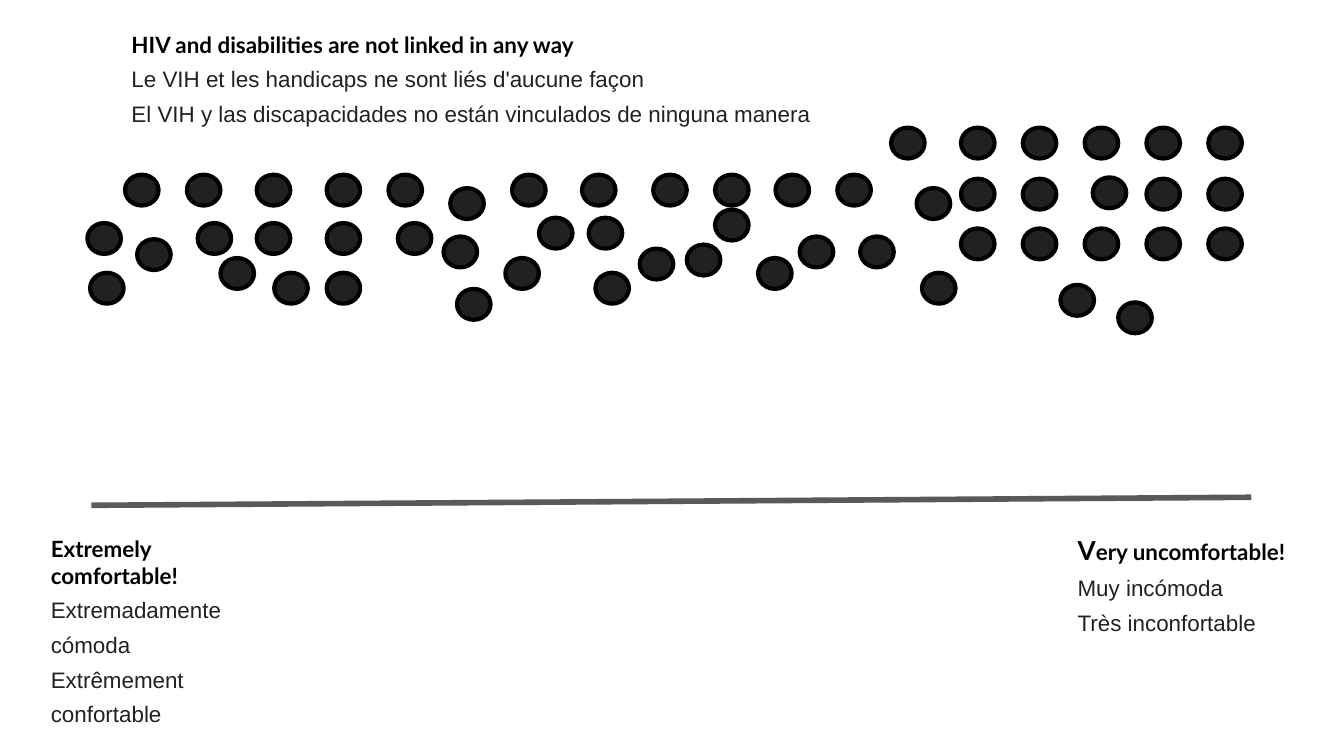
from lxml import etree
from pptx import Presentation
from pptx import util as u
from pptx.dml.color import RGBColor
from pptx.enum import shapes, text
from pptx.oxml.ns import qn

PX = 4572
COLORS = {"heading": "000000", "body": "202124", "dot": "212121",
          "outline": "000000", "scale": "595959"}
DOT_W, DOT_H = 50, 46
DOT_ROWS = {
    190: [1326, 1430, 1522, 1614, 1706, 1798],
    260: [186, 278, 382, 486, 578, 762, 866, 972, 1064, 1154, 1246],
    264: [1626],
    266: [1430, 1522, 1706, 1798],
    280: [670, 1364],
    312: [1064],
    324: [802, 876],
    332: [130, 294, 382, 486, 592],
    340: [1430, 1522, 1614, 1706, 1798],
    352: [660, 1190, 1280],
    356: [204],
    364: [1022],
    370: [952],
    384: [328, 752, 1128],
    406: [134, 408, 486, 886, 1372],
    424: [1578],
    430: [680],
    450: [1664],
}


def px(n):
    return u.Emu(n * PX)


def rgb(name):
    return RGBColor.from_string(COLORS[name])


def add_run(p, words, size, font, color, bold):
    r = p.add_run()
    r.text = words
    r.font.size = u.Pt(size)
    r.font.name = font
    r.font.bold = bold
    r.font.color.rgb = rgb(color)


def add_label(s, x, y, w, h, heading, translations):
    tf = s.shapes.add_textbox(px(x), px(y), px(w), px(h)).text_frame
    tf.word_wrap = True
    tf.vertical_anchor = text.MSO_ANCHOR.TOP
    tf.margin_left = tf.margin_right = tf.margin_top = tf.margin_bottom = px(20)
    for words, size in heading:
        add_run(tf.paragraphs[0], words, size, "Lato", "heading", True)
    for words in translations:
        p = tf.add_paragraph()
        p.line_spacing = 1.29
        add_run(p, words, 12, "Arial", "body", False)


def add_scale(s, x1, y1, x2, y2):
    line = s.shapes.add_connector(shapes.MSO_CONNECTOR.STRAIGHT,
                                  px(x1), px(y1), px(x2), px(y2))
    line.line.color.rgb = rgb("scale")
    line.line.width = u.Pt(3)
    etree.SubElement(line._element.spPr, qn("a:effectLst"))


def add_dot(s, x, y):
    sp = s.shapes.add_shape(shapes.MSO_SHAPE.OVAL, px(x), px(y), px(DOT_W), px(DOT_H))
    sp.shadow.inherit = False
    sp.fill.solid()
    sp.fill.fore_color.rgb = rgb("dot")
    sp.line.color.rgb = rgb("outline")
    sp.line.width = u.Pt(2.25)


def main():
    prs = Presentation()
    prs.slide_width, prs.slide_height = px(2000), px(1125)
    s = prs.slides.add_slide(prs.slide_layouts[6])
    add_label(s, 176, 26, 1602, 90,
              [("HIV and disabilities are not linked in any way", 12)],
              ["Le VIH et les handicaps ne sont liés d'aucune façon",
               "El VIH y las discapacidades no están vinculados de ninguna manera"])
    add_scale(s, 136, 752, 1862, 740)
    add_label(s, 56, 776, 314, 108, [("Extremely comfortable!", 12)],
              ["Extremadamente cómoda", "Extrêmement confortable"])
    add_label(s, 1584, 776, 360, 108, [("V", 14), ("ery uncomfortable!", 12)],
              ["Muy incómoda", "Très inconfortable"])
    for y, lefts in DOT_ROWS.items():
        for x in lefts:
            add_dot(s, x, y)
    prs.save("out.pptx")


if __name__ == "__main__":
    main()
